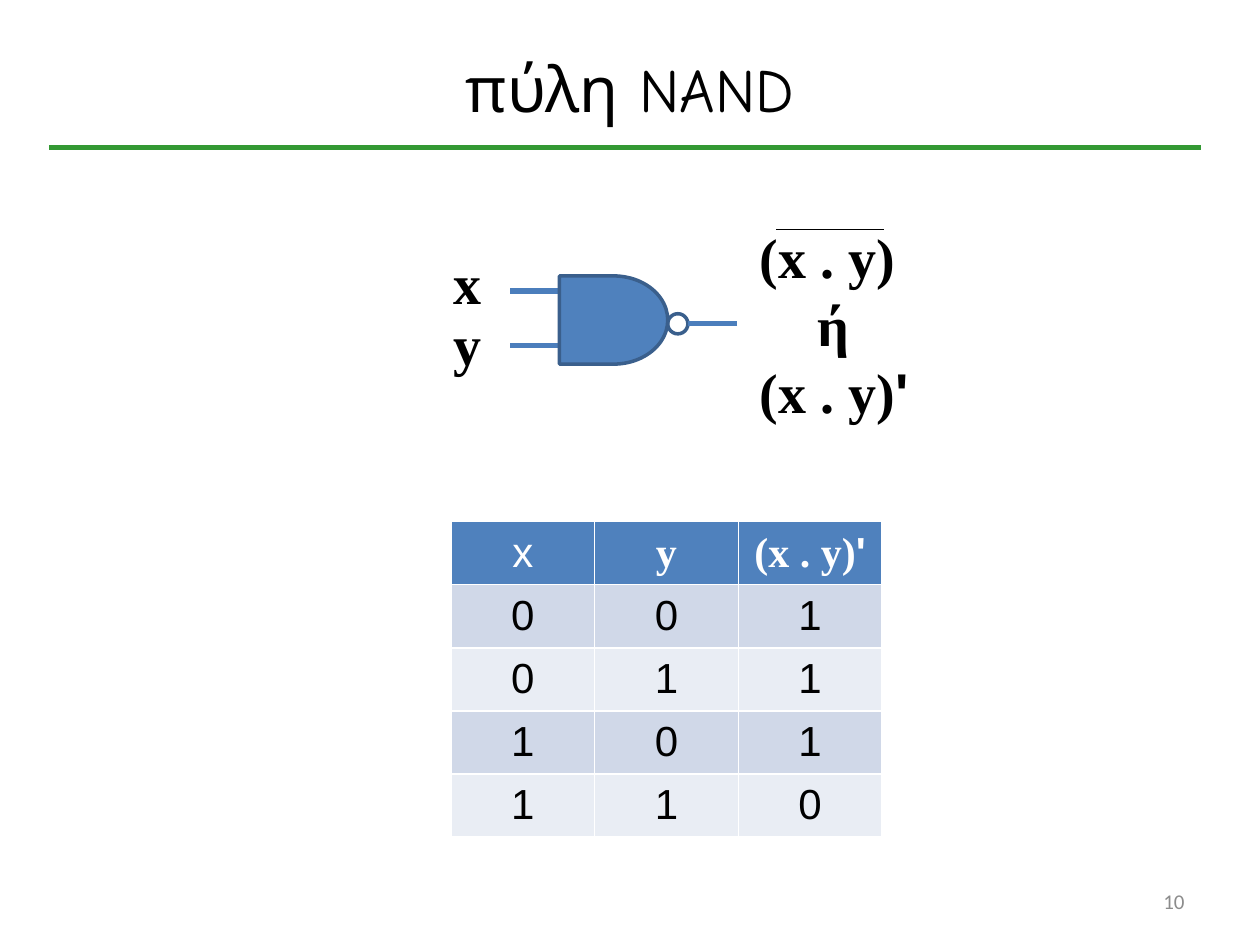
from lxml.etree import SubElement
from pptx import Presentation
from pptx.dml.color import RGBColor
from pptx.enum.shapes import MSO_CONNECTOR, MSO_SHAPE
from pptx.enum.text import MSO_ANCHOR, MSO_AUTO_SIZE, PP_ALIGN
from pptx.oxml.ns import qn
from pptx.util import Inches, Pt

# Content: a run is (text, font, size, bold)
SERIF, SANS = "Times New Roman", "Arial"
TITLE = [("πύλη", "Comic Neue", 36, False), (" NAND", "Comic Neue", 35, False)]
PAGE_NUMBER = [("10", "Calibri", 12, False)]
INPUTS = [("x", 1.92), ("y", 2.41)]
OUTPUT = [
    ([("(x . y)", SERIF, 32, True)], PP_ALIGN.LEFT),
    ([("ή ", SERIF, 32, True)], PP_ALIGN.CENTER),
    ([("(x . y)", SERIF, 32, True), ("ʹ", SANS, 32, True)], PP_ALIGN.LEFT),
]
TABLE_HEADER = [
    [("x", SANS, 24, False)],
    [("y", SERIF, 24, True)],
    [("(x . y)", SERIF, 24, True), ("ʹ", SANS, 24, True)],
]
TRUTH_ROWS = [(0, 0, 1), (0, 1, 1), (1, 0, 1), (1, 1, 0)]

# Lines: start, end, colour, width
BLUE, OUTLINE, WIRE = "4F81BD", "3A5F8C", "4B7EBC"
TITLE_RULE = ((0.39, 1.17), (9.53, 1.17), "339933", 3)
WIRES = [
    ((4.44, 2.31), (4.05, 2.31), WIRE, 3),
    ((4.44, 2.74), (4.05, 2.74), WIRE, 3),
    ((5.85, 2.57), (5.46, 2.57), WIRE, 3),
]
NEGATION_BAR = ((6.16, 1.82), (7.02, 1.82), "000000", 0.75)
BODY_FILLS = ("D0D8E8", "E9EDF4")


def colour(value):
    return RGBColor.from_string(value)


def box(*lengths):
    return [Inches(length) for length in lengths]


def write(paragraph, runs, ink="000000", align=PP_ALIGN.LEFT):
    paragraph.alignment = align
    for text, font, size, bold in runs:
        run = paragraph.add_run()
        run.text = text
        run.font.name = font
        run.font.size = Pt(size)
        run.font.bold = bold
        run.font.color.rgb = colour(ink)


def add_text(slide, place, paragraphs, ink="000000", wrap=True, anchor=MSO_ANCHOR.TOP):
    frame = slide.shapes.add_textbox(*box(*place)).text_frame
    frame.word_wrap = wrap
    frame.vertical_anchor = anchor
    for index, (runs, align) in enumerate(paragraphs):
        paragraph = frame.add_paragraph() if index else frame.paragraphs[0]
        write(paragraph, runs, ink, align)
    return frame


def add_line(slide, start, end, ink, width):
    line = slide.shapes.add_connector(MSO_CONNECTOR.STRAIGHT, *box(*start, *end))
    line.line.color.rgb = colour(ink)
    line.line.width = Pt(width)
    SubElement(line._element.spPr, qn("a:effectLst"))


def add_symbol(slide, kind, place, fill):
    shape = slide.shapes.add_shape(kind, *box(*place))
    shape.shadow.inherit = False
    shape.fill.solid()
    shape.fill.fore_color.rgb = colour(fill)
    shape.line.color.rgb = colour(OUTLINE)
    shape.line.width = Pt(2)


def fill_cell(cell, runs, fill, ink):
    cell.fill.solid()
    cell.fill.fore_color.rgb = colour(fill)
    cell.vertical_anchor = MSO_ANCHOR.MIDDLE
    write(cell.text_frame.paragraphs[0], runs, ink, PP_ALIGN.CENTER)


def main():
    presentation = Presentation()
    presentation.slide_width, presentation.slide_height = box(10, 7.5)
    slide = presentation.slides.add_slide(presentation.slide_layouts[5])

    # Title, rule and page number
    title = slide.shapes.title
    title.left, title.top, title.width, title.height = box(0.5, 0.3, 9, 0.79)
    title.text_frame.vertical_anchor = MSO_ANCHOR.MIDDLE
    write(title.text_frame.paragraphs[0], TITLE, align=PP_ALIGN.CENTER)
    add_line(slide, *TITLE_RULE)
    add_text(slide, (7.17, 6.95, 2.33, 0.4), [(PAGE_NUMBER, PP_ALIGN.RIGHT)],
             "8C8C8C", anchor=MSO_ANCHOR.MIDDLE)

    # Gate with its wires and labels
    add_symbol(slide, MSO_SHAPE.FLOWCHART_CONNECTOR, (5.3, 2.49, 0.16, 0.16), "FFFFFF")
    for wire in WIRES:
        add_line(slide, *wire)
    add_symbol(slide, MSO_SHAPE.FLOWCHART_DELAY, (4.44, 2.19, 0.86, 0.7), BLUE)
    for name, top in INPUTS:
        frame = add_text(slide, (3.5, top, 0.43, 0.64),
                         [([(name, SERIF, 32, True)], PP_ALIGN.LEFT)], wrap=False)
        frame.auto_size = MSO_AUTO_SIZE.SHAPE_TO_FIT_TEXT
    frame = add_text(slide, (5.93, 1.72, 1.48, 1.72), OUTPUT)
    frame.auto_size = MSO_AUTO_SIZE.SHAPE_TO_FIT_TEXT
    add_line(slide, *NEGATION_BAR)

    # Truth table; the default table style supplies the white borders
    table = slide.shapes.add_table(len(TRUTH_ROWS) + 1, len(TABLE_HEADER),
                                   *box(3.58, 4.14, 3.42, 2.5)).table
    for column, runs in enumerate(TABLE_HEADER):
        fill_cell(table.cell(0, column), runs, BLUE, "FFFFFF")
    for row, values in enumerate(TRUTH_ROWS):
        for column, value in enumerate(values):
            fill_cell(table.cell(row + 1, column), [(str(value), SANS, 24, False)],
                      BODY_FILLS[row % 2], "000000")

    presentation.save("out.pptx")


if __name__ == "__main__":
    main()
